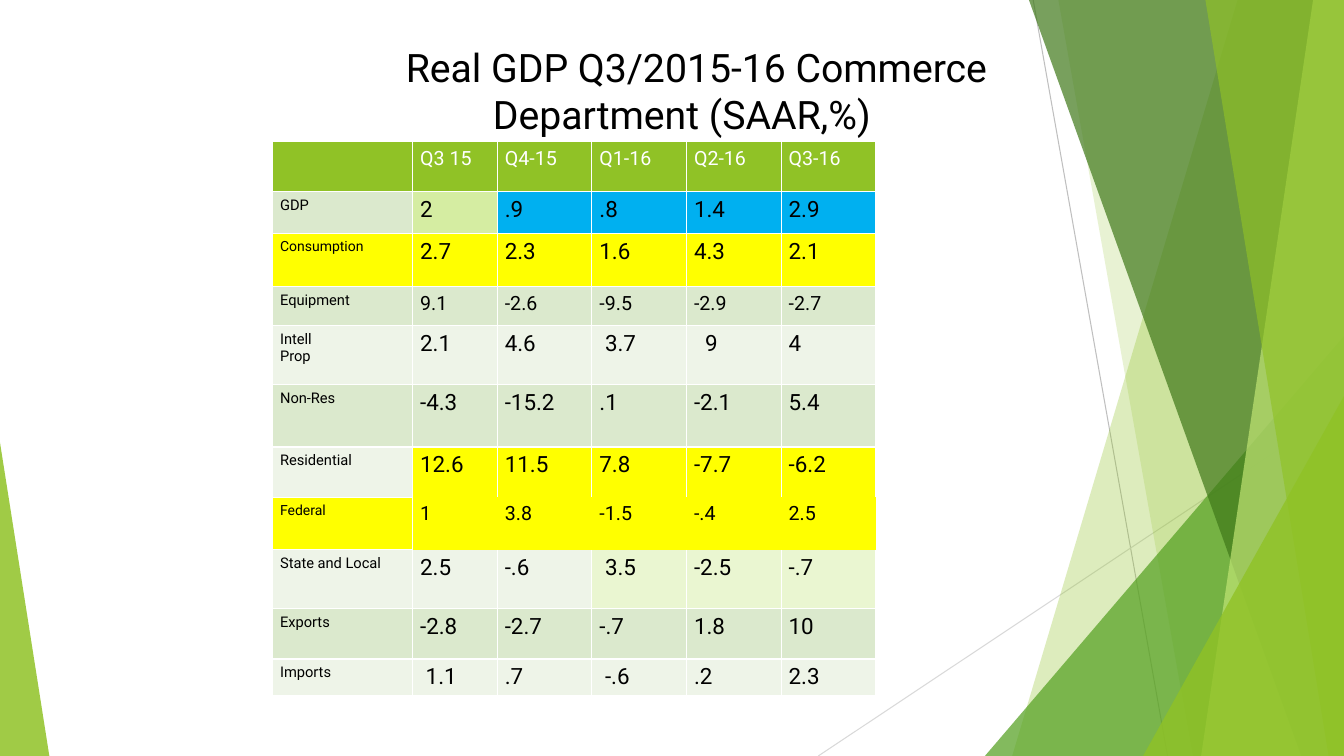
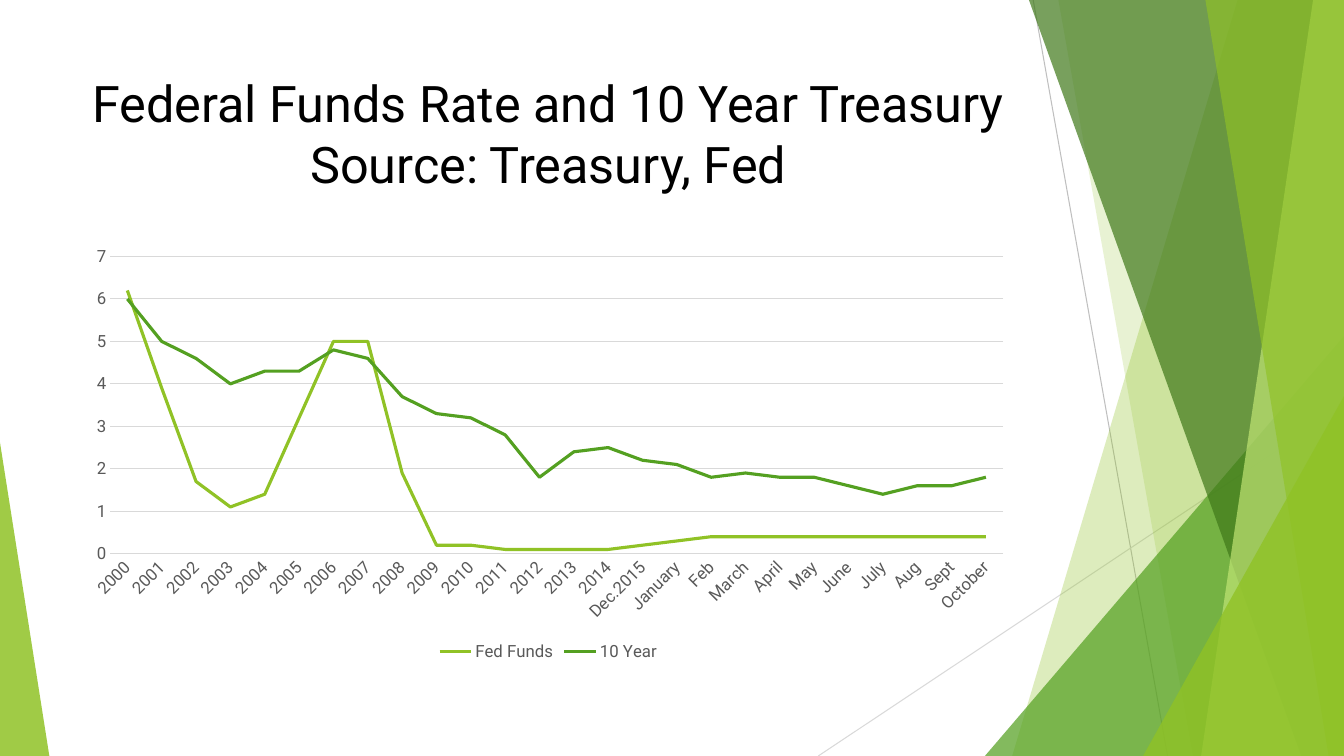
"""Build two economics slides: a GDP table and an interest rate chart."""
from lxml import etree
from pptx import Presentation
from pptx.chart import data
from pptx.dml.color import RGBColor
from pptx.enum import chart as ch, shapes, text
from pptx.oxml.ns import qn
from pptx.util import Pt

FONT = "Roboto"
COLORS = {
    "white": "FFFFFF", "black": "000000", "gray": "595959",
    "rule": "D9D9D9", "rule_dark": "BFBFBF",
    "lime": "90C226", "green": "54A021", "forest": "3F7819", "pale": "C0E474",
    "band": "DBE9CD", "band_light": "EEF4E8", "tint": "D5EDA2",
    "tint_light": "EAF6D1", "blue": "00B0F0", "yellow": "FFFF00",
}
RGB = {name: RGBColor.from_string(value) for name, value in COLORS.items()}


def write(tf, content, size=16, color="black", align=text.PP_ALIGN.LEFT, indent=0):
    """Fill a text frame with one paragraph per line of content."""
    for i, line in enumerate(content.split("\n")):
        p = tf.add_paragraph() if i else tf.paragraphs[0]
        p.alignment = align
        if indent:
            p._p.get_or_add_pPr().set("indent", str(Pt(indent)))
        r = p.add_run()
        r.text = line
        r.font.size, r.font.name = Pt(size), FONT
        r.font.color.rgb = RGB[color]


def set_borders(cell, sides):
    """Draw white borders on the given sides of a cell and none on the others."""
    tc_pr = cell._tc.get_or_add_tcPr()
    for i, side in enumerate("LRTB"):
        ln = etree.Element(qn(f"a:ln{side}"), w=str(Pt(1)))
        if side in sides:
            fill = etree.SubElement(ln, qn("a:solidFill"))
            etree.SubElement(fill, qn("a:srgbClr"), val=COLORS["white"])
        else:
            etree.SubElement(ln, qn("a:noFill"))
        tc_pr.insert(i, ln)


prs = Presentation()
prs.slide_width, prs.slide_height = Pt(960), Pt(540)
layout = prs.slide_layouts[6]
for ph in list(layout.placeholders):
    layout.shapes.element.remove(ph.element)
gdp_slide, rates_slide = [prs.slides.add_slide(layout) for _ in range(2)]

for color, *ends in [("rule_dark", 738, 0, 834, 540), ("rule", 960, 290, 584.5, 540)]:
    line = gdp_slide.shapes.add_connector(
        shapes.MSO_CONNECTOR.STRAIGHT, *[Pt(v) for v in ends])
    line.line.color.rgb, line.line.width = RGB[color], Pt(0.75)
    etree.SubElement(line.element.spPr, qn("a:effectLst"))

facets = [
    ("lime", 30, (884, 723)),
    ("lime", 20, (756, 852)),
    ("green", 72, (703.5, 240, 256.5, 300, 1)),
    ("forest", 70, (735, 929.5)),
    ("pale", 70, (938, 858)),
    ("lime", 65, (861, 949)),
    ("lime", 80, (816.5, 283, 143.5, 257, 1)),
    ("lime", 85, (0, 316, 35.25, 224, 0)),
]
for color, alpha, geometry in facets:
    if len(geometry) == 2:
        top_x, bottom_x = geometry
        outline = gdp_slide.shapes.build_freeform(Pt(top_x), 0)
        outline.add_line_segments(
            [(Pt(960), 0), (Pt(960), Pt(540)), (Pt(bottom_x), Pt(540))])
        sp = outline.convert_to_shape()
    else:
        *box, apex = geometry
        sp = gdp_slide.shapes.add_shape(
            shapes.MSO_SHAPE.ISOSCELES_TRIANGLE, *[Pt(v) for v in box])
        sp.adjustments[0] = apex
    sp.shadow.inherit = False
    sp.line.fill.background()
    sp.fill.solid()
    sp.fill.fore_color.rgb = RGB[color]
    clr = sp.element.spPr.find(f"{qn('a:solidFill')}/{qn('a:srgbClr')}")
    etree.SubElement(clr, qn("a:alpha"), val=str(alpha * 1000))

for sp in list(gdp_slide.shapes):
    layout.shapes.element.append(sp.element)

titles = [
    (gdp_slide, "Real GDP Q3/2015-16 Commerce Department (SAAR,%)",
     (244, 27.5, 486, 90), 28, 20.75),
    (rates_slide, "Federal Funds Rate and 10 Year Treasury\nSource: Treasury, Fed",
     (53.25, 48, 676.8, 104), 36, 0),
]
for s, title, box, size, indent in titles:
    tf = s.shapes.add_textbox(*[Pt(v) for v in box]).text_frame
    tf.word_wrap = True
    write(tf, title, size, align=text.PP_ALIGN.CENTER, indent=indent)

rows = [
    (35.6, 14, ["", "Q3 15", "Q4-15", "Q1-16", "Q2-16", "Q3-16"], ["lime"] * 6),
    (30, 16, ["GDP", "2", ".9", ".8", "1.4", "2.9"], ["band", "tint"] + ["blue"] * 4),
    (38, 16, ["Consumption", "2.7", "2.3", "1.6", "4.3", "2.1"], ["yellow"] * 6),
    (28, 14, ["Equipment", "9.1", "-2.6", "-9.5", "-2.9", "-2.7"], ["band"] * 6),
    (42, 16, ["Intell\nProp", "2.1", "4.6", "3.7", "9", "4"], ["band_light"] * 6),
    (44.5, 16, ["Non-Res", "-4.3", "-15.2", ".1", "-2.1", "5.4"], ["band"] * 6),
    (36, 16, ["Residential", "12.6", "11.5", "7.8", "-7.7", "-6.2"],
     ["band_light"] + ["yellow"] * 5),
    (37.5, 14, ["Federal", "1", "3.8", "-1.5", "-.4", "2.5"], ["yellow"] * 6),
    (42, 16, ["State and Local", "2.5", "-.6", "3.5", "-2.5", "-.7"],
     ["band_light"] * 3 + ["tint_light"] * 3),
    (36, 16, ["Exports", "-2.8", "-2.7", "-.7", "1.8", "10"], ["band"] * 6),
    (26, 16, ["Imports", "1.1", ".7", "-.6", ".2", "2.3"], ["band_light"] * 6),
]
widths = [100, 60.5] + [67.6] * 4
insets = {("Intell\nProp", 3): 4, ("Intell\nProp", 4): 8,
          ("State and Local", 3): 4, ("Imports", 1): 4, ("Imports", 3): 4}
open_sides = {"Residential": "LRT", "Federal": "", "State and Local": "LRB"}

table = gdp_slide.shapes.add_table(
    len(rows), len(widths), Pt(194.75), Pt(101.25), Pt(sum(widths)),
    Pt(sum(row[0] for row in rows))).table
table.first_row = table.horz_banding = False
for column, width in zip(table.columns, widths):
    column.width = Pt(width)
for i, (height, size, values, fills) in enumerate(rows):
    table.rows[i].height = Pt(height)
    label = values[0]
    for j, (value, fill) in enumerate(zip(values, fills)):
        cell = table.cell(i, j)
        cell.margin_left = Pt(5.4 + insets.get((label, j), 0))
        cell.margin_right = Pt(5.4)
        cell.fill.solid()
        cell.fill.fore_color.rgb = RGB[fill]
        sides = open_sides.get(label, "LRTB") if j else "LRTB"
        set_borders(cell, "L" if j == 1 and not sides else sides)
        if value:
            label_size = 10 if fill == "yellow" else 10.5
            write(cell.text_frame, value, size if j or not i else label_size,
                  "black" if i else "white")

cd = data.CategoryChartData()
cd.categories = [str(year) for year in range(2000, 2015)] + [
    "Dec.2015", "January", "Feb", "March", "April", "May", "June", "July",
    "Aug", "Sept", "October"]
cd.add_series("Fed Funds", [
    6.2, 3.9, 1.7, 1.1, 1.4, 3.2, 5, 5, 1.9, 0.2, 0.2, 0.1, 0.1, 0.1, 0.1,
    0.2, 0.3] + [0.4] * 9)
cd.add_series("10 Year", [
    6, 5, 4.6, 4, 4.3, 4.3, 4.8, 4.6, 3.7, 3.3, 3.2, 2.8, 1.8, 2.4, 2.5,
    2.2, 2.1, 1.8, 1.9, 1.8, 1.8, 1.6, 1.4, 1.6, 1.6, 1.8])
chart = rates_slide.shapes.add_chart(
    ch.XL_CHART_TYPE.LINE, Pt(53.25), Pt(170), Pt(676.8), Pt(305.6), cd).chart
chart.has_title = False
chart.has_legend = True
chart.legend.position = ch.XL_LEGEND_POSITION.BOTTOM
chart.legend.include_in_layout = False
cat, val = chart.category_axis, chart.value_axis
chart.font.name, chart.font.size = FONT, Pt(10)
chart.font.color.rgb = RGB["black"]
for font in (chart.legend.font, cat.tick_labels.font, val.tick_labels.font):
    font.name, font.size = FONT, Pt(12)
    font.color.rgb = RGB["gray"]
for axis in (cat, val):
    axis.major_tick_mark = axis.minor_tick_mark = ch.XL_TICK_MARK.NONE
val.tick_labels.number_format = "General"
val.tick_labels.number_format_is_linked = False
val.format.line.fill.background()
for line in (cat.format.line, val.major_gridlines.format.line):
    line.color.rgb, line.width = RGB["rule"], Pt(0.75)
for body in chart.element.xpath(".//c:catAx/c:txPr/a:bodyPr | .//c:valAx/c:txPr/a:bodyPr"):
    body.set("rot", "-60000000")

plot = chart.plots[0]
plot.vary_by_categories = False
for series, color in zip(plot.series, ["lime", "green"]):
    series.smooth = False
    series.marker.style = ch.XL_MARKER_STYLE.NONE
    series.format.line.color.rgb = RGB[color]
    series.format.line.width = Pt(2.25)

prs.save("out.pptx")
